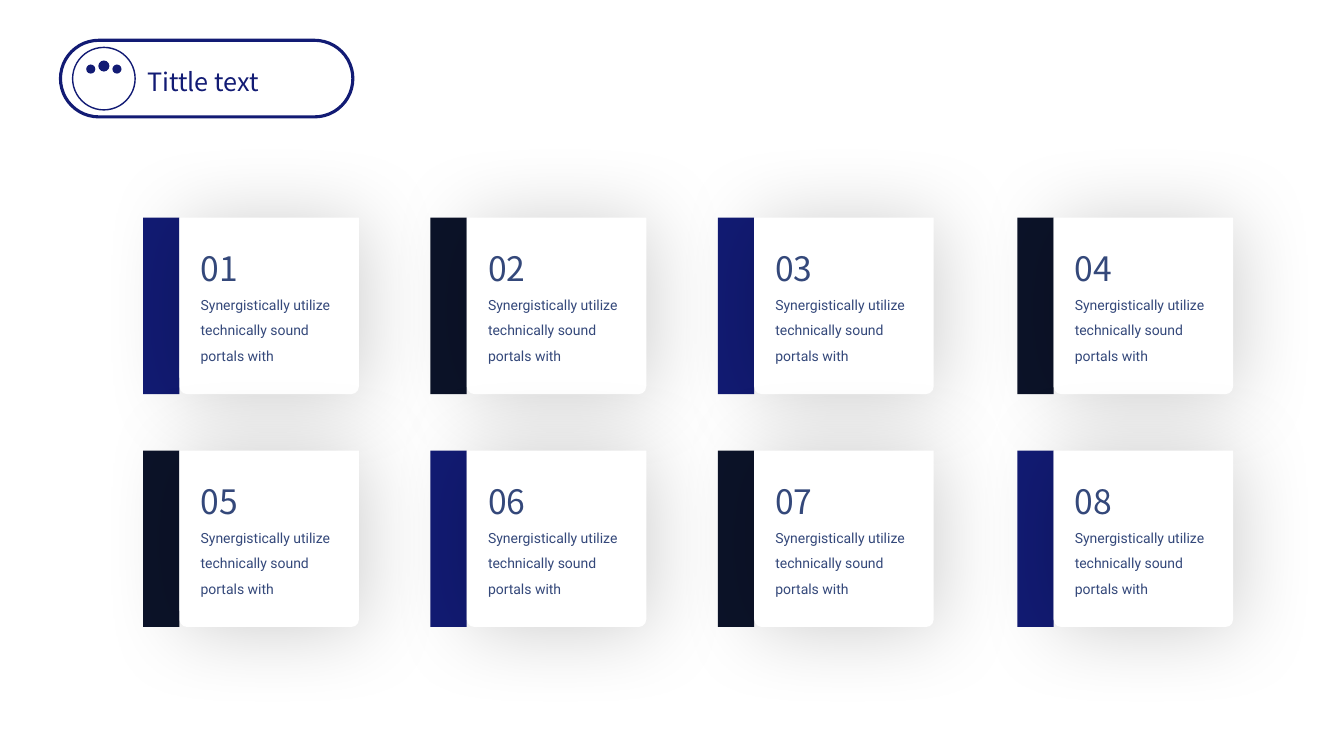
"""Title pill with a team icon above a grid of eight numbered cards."""
from lxml import etree
from pptx import Presentation
from pptx import util as u
from pptx.dml.color import RGBColor
from pptx.enum import shapes, text
from pptx.oxml.ns import qn

COLORS = {"navy": "121B74", "ink": "0C1329", "slate": "34487A", "white": "FFFFFF", "shadow": "000000"}
HEADING, BODY = "Noto Sans CJK SC", "Roboto"
KIND = shapes.MSO_SHAPE


def paint(sp, fill=None, line=None, width=1):
    sp.shadow.inherit = False
    if fill:
        sp.fill.solid()
        sp.fill.fore_color.rgb = RGBColor.from_string(COLORS[fill])
    else:
        sp.fill.background()
    if line:
        sp.line.color.rgb = RGBColor.from_string(COLORS[line])
        sp.line.width = u.Pt(width)
    else:
        sp.line.fill.background()
    return sp


def write(sp, words, size, font, color, frame, para):
    tf = sp.text_frame
    frame = {"word_wrap": True, "auto_size": text.MSO_AUTO_SIZE.SHAPE_TO_FIT_TEXT, **frame}
    p = tf.paragraphs[0]
    r = p.add_run()
    r.text = words
    r.font.color.rgb = RGBColor.from_string(COLORS[color])
    run = {"size": u.Pt(size), "name": font}
    for target, values in ((tf, frame), (p, para), (r.font, run)):
        for name, value in values.items():
            setattr(target, name, value)


prs = Presentation()
prs.slide_width, prs.slide_height = u.Inches(13.33), u.Inches(7.5)
s = prs.slides.add_slide(prs.slide_layouts[5])

title = s.shapes.title
place = {"left": 1.36, "top": 0.61, "width": 2.01, "height": 0.4}
for name, value in place.items():
    setattr(title, name, u.Inches(value))
write(title, "Tittle text", 18, HEADING, "navy", {"vertical_anchor": text.MSO_ANCHOR.TOP},
      {"alignment": text.PP_ALIGN.JUSTIFY, "line_spacing": 1.0})

pill = s.shapes.add_shape(KIND.ROUNDED_RECTANGLE, *map(u.Inches, (0.6, 0.4, 2.9, 0.76)))
pill.adjustments[0] = 0.5
paint(pill, line="navy", width=2.25)

icon_x = 1.03
ring = s.shapes.add_shape(KIND.OVAL, *map(u.Inches, (icon_x - 0.31, 0.47, 0.62, 0.62)))
paint(ring, "white", "navy")
for dx, top, size in ((0, 0.6, 0.11), (-0.13, 0.64, 0.09), (0.13, 0.64, 0.09)):
    head = s.shapes.add_shape(KIND.OVAL, *map(u.Inches, (icon_x + dx - size / 2, top, size, size)))
    paint(head, "navy")

half = [(0.01, 0.79), (0.01, 0.73), (0.06, 0.71), (0.07, 0.74), (0.09, 0.72), (0.16, 0.72),
        (0.18, 0.74), (0.19, 0.78), (0.19, 0.84), (0.17, 0.87), (0.17, 0.93), (0.16, 0.95),
        (0.14, 0.96), (0.11, 0.96), (0.09, 0.95), (0.08, 0.93), (0.08, 0.87), (0.07, 0.86),
        (0.06, 0.87), (0.06, 0.95), (0.05, 0.97), (0.02, 0.98)]
outline = [(icon_x + x, y) for x, y in half] + [(icon_x - x, y) for x, y in reversed(half)]
builder = s.shapes.build_freeform(*outline[0], scale=u.Inches(1))
builder.add_line_segments(outline[1:], close=True)
paint(builder.convert_to_shape(), "navy")

columns, rows = (1.42, 4.27, 7.12, 10.09), (2.16, 4.47)
bar_w, card_w, card_h, indent = 0.36, 1.78, 1.75, 0.57
inset = dict.fromkeys(("margin_left", "margin_top", "margin_right", "margin_bottom"), 0)

for row, y in enumerate(rows):
    for col, x in enumerate(columns):
        bar = s.shapes.add_shape(KIND.RECTANGLE, *map(u.Inches, (x, y, bar_w, card_h)))
        paint(bar, ("navy", "ink")[(row + col) % 2])

        card = s.shapes.add_shape(KIND.ROUND_2_SAME_RECTANGLE,
                                  *map(u.Inches, (x + bar_w, y, card_w, card_h)))
        card.rotation = 180
        card.adjustments[0], card.adjustments[1] = 0.043, 0
        paint(card, "white")
        effects = card._element.spPr.find(qn("a:effectLst"))
        shadow = etree.SubElement(effects, qn("a:outerShdw"), blurRad=str(u.Pt(59)),
                                  dist=str(u.Pt(3)), dir=str(45 * 60000), algn="tl", rotWithShape="0")
        tint = etree.SubElement(shadow, qn("a:srgbClr"), val=COLORS["shadow"])
        etree.SubElement(tint, qn("a:alpha"), val="20000")

        body = s.shapes.add_textbox(*map(u.Inches, (x + indent, y + 0.7, 1.35, 0.73)))
        write(body, "Synergistically utilize technically sound portals with", 10, BODY, "slate",
              inset, {"line_spacing": 1.5})
        number = s.shapes.add_textbox(*map(u.Inches, (x + indent, y + 0.3, 0.45, 0.4)))
        write(number, f"{row * len(columns) + col + 1:02d}", 24, HEADING, "slate",
              {**inset, "vertical_anchor": text.MSO_ANCHOR.MIDDLE}, {})

prs.save("out.pptx")
